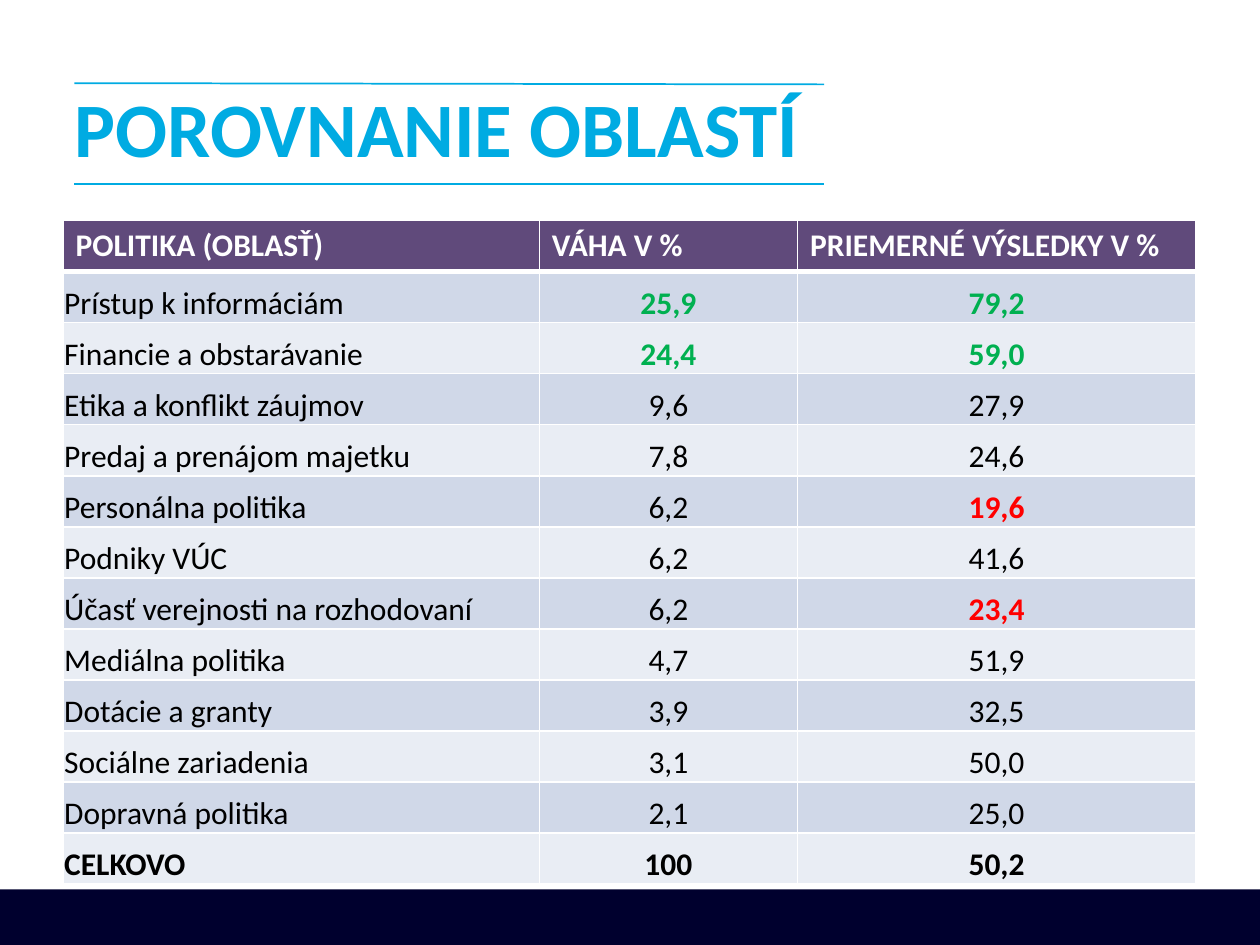
from lxml.etree import SubElement
from pptx import Presentation
from pptx.dml.color import RGBColor
from pptx.enum.shapes import MSO_CONNECTOR, MSO_SHAPE
from pptx.enum.text import MSO_ANCHOR, PP_ALIGN
from pptx.oxml.ns import qn
from pptx.util import Inches, Pt

BLUE, NAVY, PURPLE = "00ABE2", "00002E", "604A7B"
WHITE, BLACK, GREEN, RED = "FFFFFF", "000000", "00B050", "FF0000"
BANDS = ["D0D8E8", "E9EDF4"]
HEADINGS = ["POLITIKA (OBLASŤ)", "VÁHA V %", "PRIEMERNÉ VÝSLEDKY V %"]
AREAS = [
    ("Prístup k informáciám", "25,9", "79,2"),
    ("Financie a obstarávanie", "24,4", "59,0"),
    ("Etika a konflikt záujmov", "9,6", "27,9"),
    ("Predaj a prenájom majetku", "7,8", "24,6"),
    ("Personálna politika", "6,2", "19,6"),
    ("Podniky VÚC", "6,2", "41,6"),
    ("Účasť verejnosti na rozhodovaní", "6,2", "23,4"),
    ("Mediálna politika", "4,7", "51,9"),
    ("Dotácie a granty", "3,9", "32,5"),
    ("Sociálne zariadenia", "3,1", "50,0"),
    ("Dopravná politika", "2,1", "25,0"),
    ("CELKOVO", "100", "50,2"),
]
HIGHLIGHTS = {"25,9": GREEN, "79,2": GREEN, "24,4": GREEN, "59,0": GREEN,
              "19,6": RED, "23,4": RED}
COLUMN_WIDTHS = [3.78, 2.05, 3.16]
TABLE_HEIGHT = 5.27


def rgb(value):
    return RGBColor.from_string(value)


def write(frame, text, size=18, color=BLACK, bold=False, align=PP_ALIGN.LEFT, spacing=None):
    paragraph = frame.paragraphs[0]
    paragraph.alignment = align
    paragraph.line_spacing = spacing
    run = paragraph.add_run()
    run.text = text
    run.font.name = "Calibri"
    run.font.size = Pt(size)
    run.font.bold = bold
    run.font.color.rgb = rgb(color)


def set_margins(target, left, top, right, bottom):
    target.margin_left, target.margin_top = Inches(left), Inches(top)
    target.margin_right, target.margin_bottom = Inches(right), Inches(bottom)


def add_title(slide, text):
    title = slide.shapes.title
    title.left, title.top = Inches(0.59), Inches(0.62)
    title.width, title.height = Inches(6.93), Inches(0.87)
    frame = title.text_frame
    frame.word_wrap = True
    frame.vertical_anchor = MSO_ANCHOR.MIDDLE
    set_margins(frame, 0, 0, 0, 0)
    write(frame, text, size=44, color=BLUE, bold=True, spacing=0.9)


def add_rule(slide, start_y, end_y):
    rule = slide.shapes.add_connector(
        MSO_CONNECTOR.STRAIGHT, Inches(0.59), Inches(start_y), Inches(6.54), Inches(end_y))
    rule.line.color.rgb = rgb(BLUE)
    rule.line.width = Pt(1)
    SubElement(rule._element.spPr, qn("a:effectLst"))


def add_footer_band(slide):
    band = slide.shapes.add_shape(
        MSO_SHAPE.RECTANGLE, 0, Inches(7.06), Inches(10), Inches(0.44))
    band.shadow.inherit = False
    band.fill.solid()
    band.fill.fore_color.rgb = rgb(NAVY)
    band.line.fill.background()


def style_cell(cell, fill, bottom_width=1):
    properties = cell._tc.get_or_add_tcPr()
    for side, width in (("L", 1), ("R", 1), ("T", 1), ("B", bottom_width)):
        border = SubElement(properties, qn(f"a:ln{side}"), w=str(Pt(width)))
        line_fill = SubElement(border, qn("a:solidFill"))
        SubElement(line_fill, qn("a:srgbClr"), val=WHITE)
    cell.fill.solid()
    cell.fill.fore_color.rgb = rgb(fill)


def add_results_table(slide):
    row_count = len(AREAS) + 1
    table = slide.shapes.add_table(
        row_count, len(HEADINGS), Inches(0.5), Inches(1.75),
        Inches(sum(COLUMN_WIDTHS)), Inches(TABLE_HEIGHT)).table
    for column, width in zip(table.columns, COLUMN_WIDTHS):
        column.width = Inches(width)
    for row in table.rows:
        row.height = Inches(TABLE_HEIGHT / row_count)
    for index, heading in enumerate(HEADINGS):
        cell = table.cell(0, index)
        style_cell(cell, PURPLE, bottom_width=3)
        write(cell.text_frame, heading, color=WHITE, bold=True)
    for row_index, area in enumerate(AREAS):
        is_total = row_index == len(AREAS) - 1
        for index, value in enumerate(area):
            cell = table.cell(row_index + 1, index)
            style_cell(cell, BANDS[row_index % 2])
            cell.vertical_anchor = MSO_ANCHOR.BOTTOM
            set_margins(cell, 0.01, 0.01, 0.01, 0)
            write(cell.text_frame, value,
                  color=HIGHLIGHTS.get(value, BLACK),
                  bold=is_total or value in HIGHLIGHTS,
                  align=PP_ALIGN.CENTER if index else PP_ALIGN.LEFT)


def main():
    presentation = Presentation()
    presentation.slide_width, presentation.slide_height = Inches(10), Inches(7.5)
    slide = presentation.slides.add_slide(presentation.slide_layouts[5])
    add_footer_band(slide)
    add_rule(slide, 0.66, 0.67)
    add_rule(slide, 1.46, 1.46)
    add_title(slide, "POROVNANIE OBLASTÍ")
    add_results_table(slide)
    presentation.save("out.pptx")


if __name__ == "__main__":
    main()
